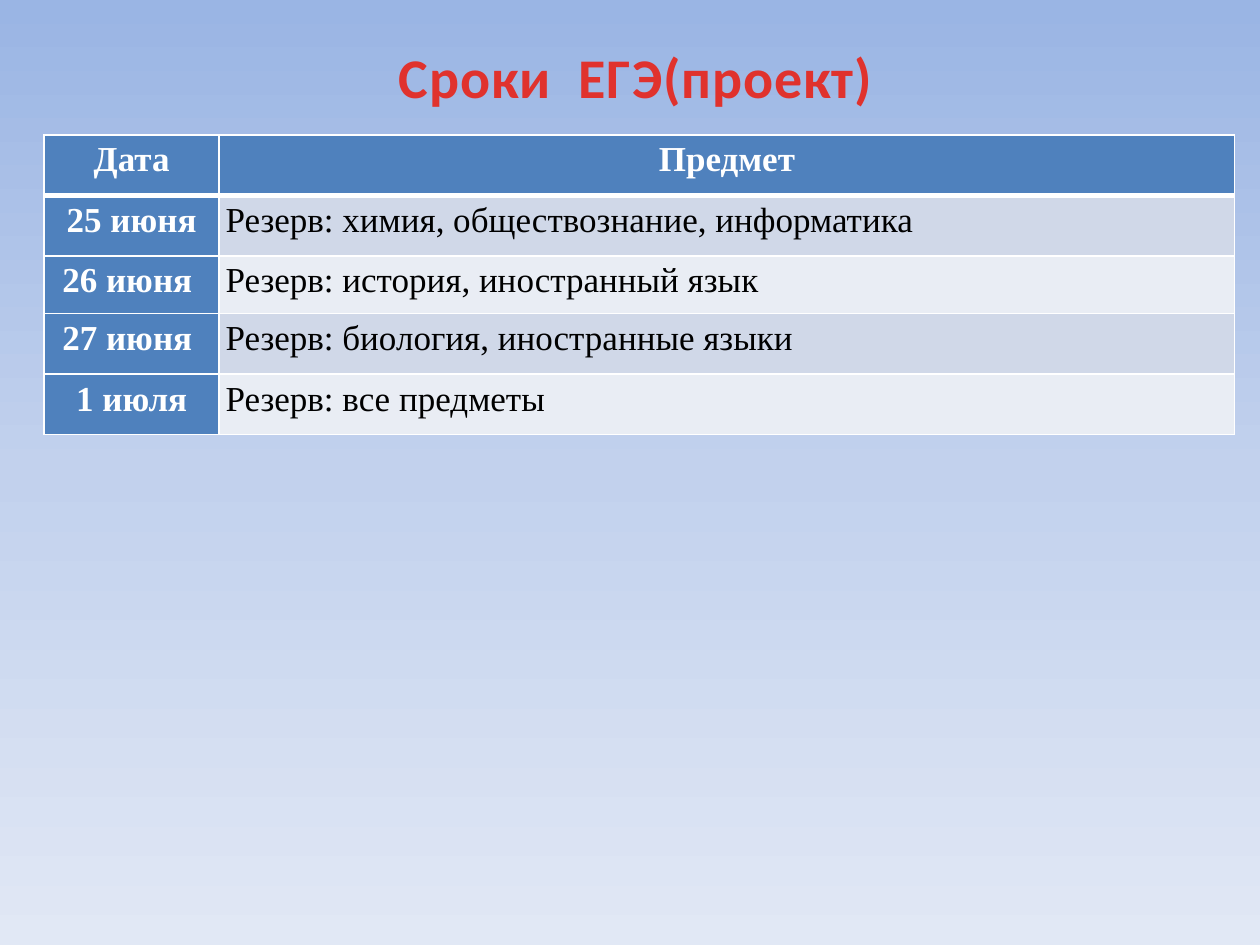
import dataclasses

import lxml.etree
import pptx
import pptx.dml.color
import pptx.enum.text
import pptx.oxml.ns
import pptx.util

Inches, Pt = pptx.util.Inches, pptx.util.Pt
ALIGN = pptx.enum.text.PP_ALIGN
qn = pptx.oxml.ns.qn


@dataclasses.dataclass(frozen=True)
class Theme:
    background: tuple = ((0, "9AB5E4"), (50, "C2D1ED"), (100, "E1E8F5"))
    title: tuple = ((25, "E0322D"), (100, "A2201C"))
    accent: str = "4F81BD"
    bands: tuple = ("D0D8E8", "E9EDF4")
    light: str = "FFFFFF"
    dark: str = "000000"
    title_font: str = "Calibri"
    table_font: str = "Times New Roman"
    title_size: int = 32
    table_size: int = 20
    thin: int = 1
    thick: int = 3


THEME = Theme()
COLUMN_WIDTHS = (1.39, 8.06)
ROW_HEIGHTS = (0.48, 0.48, 0.46, 0.48, 0.48)
SCHEDULE = (
    ("Дата", "Предмет"),
    ("25 июня", "Резерв: химия, обществознание, информатика"),
    ("26 июня ", "Резерв: история, иностранный язык"),
    ("27 июня ", "Резерв: биология, иностранные языки"),
    ("1 июля", "Резерв: все предметы"),
)


def rgb(code):
    return pptx.dml.color.RGBColor.from_string(code)


def add_color(parent, code):
    lxml.etree.SubElement(parent, qn("a:srgbClr"), val=code)


def fill_downward(fill, owner, stops):
    """Give fill, held in the XML element owner, a top-to-bottom gradient."""
    fill.gradient()
    fill.gradient_angle = 270
    stop_list = next(owner.iter(qn("a:gsLst")))
    for default_stop in list(stop_list):
        stop_list.remove(default_stop)
    for percent, code in stops:
        stop = lxml.etree.SubElement(stop_list, qn("a:gs"), pos=str(percent * 1000))
        add_color(stop, code)


def add_title(slide, text):
    box = slide.shapes.add_textbox(Inches(2.72), Inches(0.29), Inches(4.65), Inches(0.64))
    frame = box.text_frame
    frame.word_wrap = True
    frame.auto_size = pptx.enum.text.MSO_AUTO_SIZE.SHAPE_TO_FIT_TEXT
    heading = frame.paragraphs[0]
    heading.alignment = ALIGN.CENTER
    run = heading.add_run()
    run.text = text
    run.font.name, run.font.size, run.font.bold = THEME.title_font, Pt(THEME.title_size), True
    properties = run._r.get_or_add_rPr()
    properties.set("spc", "50")
    fill_downward(run.font.fill, properties, THEME.title)


def set_borders(cell, top, bottom):
    properties = cell._tc.get_or_add_tcPr()
    widths = {"L": THEME.thin, "R": THEME.thin, "T": top, "B": bottom}
    for position, (side, width) in enumerate(widths.items()):
        line = lxml.etree.Element(qn(f"a:ln{side}"), w=str(Pt(width)))
        add_color(lxml.etree.SubElement(line, qn("a:solidFill")), THEME.light)
        properties.insert(position, line)


def write_cell(cell, text, fill, emphasized):
    cell.margin_left = cell.margin_right = Inches(0.05)
    cell.margin_top = cell.margin_bottom = 0
    cell.fill.solid()
    cell.fill.fore_color.rgb = rgb(fill)
    cell.text = text
    entry = cell.text_frame.paragraphs[0]
    entry.line_spacing = 1.15
    entry.alignment = ALIGN.CENTER if emphasized else ALIGN.LEFT
    entry.font.name, entry.font.size = THEME.table_font, Pt(THEME.table_size)
    entry.font.bold = emphasized
    entry.font.color.rgb = rgb(THEME.light if emphasized else THEME.dark)


def add_schedule(slide):
    schedule = slide.shapes.add_table(
        len(SCHEDULE), len(COLUMN_WIDTHS), Inches(0.35), Inches(1.07),
        Inches(sum(COLUMN_WIDTHS)), Inches(sum(ROW_HEIGHTS))).table
    for column, width in zip(schedule.columns, COLUMN_WIDTHS):
        column.width = Inches(width)
    for r, (height, entries) in enumerate(zip(ROW_HEIGHTS, SCHEDULE)):
        schedule.rows[r].height = Inches(height)
        for c, text in enumerate(entries):
            emphasized = r == 0 or c == 0
            fill = THEME.accent if emphasized else THEME.bands[(r - 1) % 2]
            cell = schedule.cell(r, c)
            write_cell(cell, text, fill, emphasized)
            set_borders(cell, top=THEME.thick if r == 1 else THEME.thin,
                        bottom=THEME.thick if r == 0 else THEME.thin)


def main():
    deck = pptx.Presentation()
    deck.slide_width, deck.slide_height = Inches(10), Inches(7.5)
    slide = deck.slides.add_slide(deck.slide_layouts[6])
    fill_downward(slide.background.fill, slide.element, THEME.background)
    add_title(slide, "Сроки  ЕГЭ(проект)")
    add_schedule(slide)
    deck.save("out.pptx")


if __name__ == "__main__":
    main()
